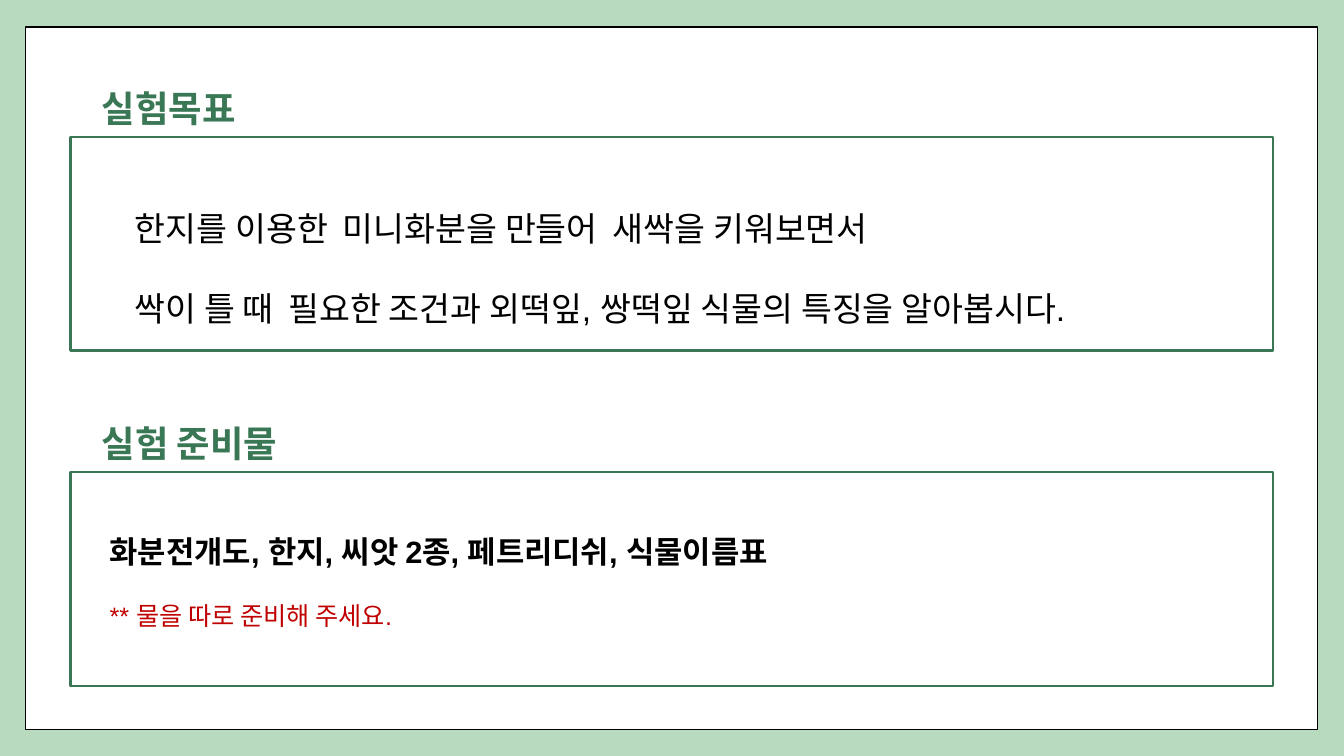
from pptx import Presentation
from pptx.dml.color import RGBColor
from pptx.enum.shapes import MSO_SHAPE
from pptx.enum.text import MSO_AUTO_SIZE
from pptx.util import Pt

RECT = MSO_SHAPE.RECTANGLE
GROW = MSO_AUTO_SIZE.SHAPE_TO_FIT_TEXT
FIXED = MSO_AUTO_SIZE.NONE

THEME = {
    "mint": "B8DABF", "green": "397755", "white": "FFFFFF",
    "black": "000000", "red": "C00000",
    "head": 26, "goal": 24, "item": 22, "note": 18,
    "title": "Cabin", "body": "Arial",
}

GOAL = [
    ("한지를 이용한  미니화분을 만들어  새싹을 키워보면서", "goal", "black", False),
    ("싹이 틀 때  필요한 조건과 외떡잎, 쌍떡잎 식물의 특징을 알아봅시다.", "goal", "black", False),
]
ITEMS = [
    ("화분전개도, 한지, 씨앗 2종, 페트리디쉬, 식물이름표", "item", "black", True),
    ("** 물을 따로 준비해 주세요.", "note", "red", False),
]
PARTS = [
    {"head": "실험목표", "wide": 141.1, "lines": GOAL, "box": (89.3, 115.9, 781.9, 114.5)},
    {"head": "실험 준비물", "wide": 165.6, "lines": ITEMS, "box": (71.3, 350.6, 830.2, 97.2)},
]

TOP, STEP = 54, 239.5
DROP = 43.8
LEFT, WIDE, HIGH = 50.4, 859, 152.6


def tint(name):
    return RGBColor.from_string(THEME[name])


def panel(slide, box, edge, weight):
    shape = slide.shapes.add_shape(RECT, *map(Pt, box))
    shape.shadow.inherit = False
    shape.fill.solid()
    shape.fill.fore_color.rgb = tint("white")
    shape.line.color.rgb = tint(edge)
    shape.line.width = Pt(weight)


def write(slide, box, lines, *, font="body", space=1, pad=3.6, fit=GROW):
    frame = slide.shapes.add_textbox(*map(Pt, box)).text_frame
    frame.word_wrap = True
    frame.auto_size = fit
    frame.margin_left = frame.margin_right = Pt(7.2)
    frame.margin_top = frame.margin_bottom = Pt(pad)
    for row, (text, size, color, bold) in enumerate(lines):
        para = frame.add_paragraph() if row else frame.paragraphs[0]
        para.line_spacing = float(space)
        run = para.add_run()
        run.text = text
        run.font.name = THEME[font]
        run.font.size = Pt(THEME[size])
        run.font.bold = bold
        run.font.color.rgb = tint(color)


def main():
    deck = Presentation()
    deck.slide_width, deck.slide_height = Pt(960), Pt(540)
    slide = deck.slides.add_slide(deck.slide_layouts[6])
    slide.background.fill.solid()
    slide.background.fill.fore_color.rgb = tint("mint")

    panel(slide, (18, 19.4, 923, 501.8), "black", 1)
    for row, part in enumerate(PARTS):
        top = TOP + row * STEP
        write(slide, (65.5, top, part["wide"], 34.6),
              [(part["head"], "head", "green", True)],
              font="title", pad=7.2, fit=FIXED)
        panel(slide, (LEFT, top + DROP, WIDE, HIGH), "green", 1.75)
        write(slide, part["box"], part["lines"], space=2)

    deck.save("out.pptx")


if __name__ == "__main__":
    main()
